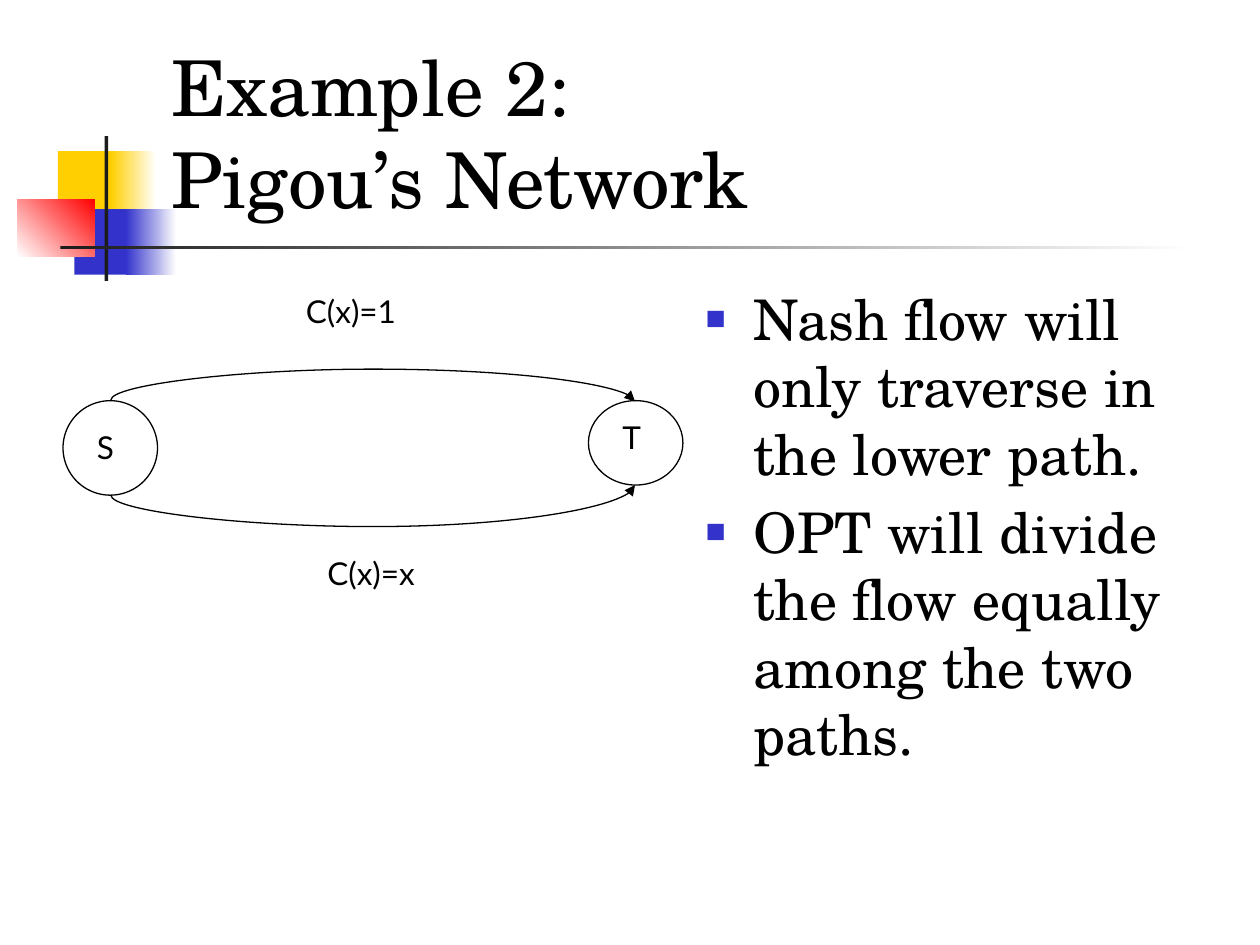
from lxml import etree
from pptx import Presentation
from pptx.dml.color import RGBColor
from pptx.enum.shapes import MSO_CONNECTOR, MSO_SHAPE
from pptx.enum.text import MSO_ANCHOR, MSO_AUTO_SIZE, PP_ALIGN
from pptx.oxml.ns import qn
from pptx.util import Inches, Pt

COLORS = {"black": "000000", "white": "FFFFFF", "yellow": "FFCF01",
          "blue": "3333CC", "red": "FF0000", "charcoal": "1C1C1C"}
SERIF, SANS = "TeX Gyre Schola", "Lato"


def color(name):
    return RGBColor.from_string(COLORS[name])


def place(shape, left, top, width, height):
    shape.left, shape.top = Inches(left), Inches(top)
    shape.width, shape.height = Inches(width), Inches(height)


def style(paragraph, font, size):
    paragraph.alignment = PP_ALIGN.LEFT
    paragraph.font.name = font
    paragraph.font.size = Pt(size)
    paragraph.font.color.rgb = color("black")


def add_block(slide, box, start, end=None, angle=0):
    """Borderless rectangle, solid or fading from start to end."""
    block = slide.shapes.add_shape(MSO_SHAPE.RECTANGLE, *map(Inches, box))
    block.shadow.inherit = False
    block.line.fill.background()
    if end is None:
        block.fill.solid()
        block.fill.fore_color.rgb = color(start)
        return
    block.fill.gradient()
    block.fill.gradient_angle = angle
    for stop, name in zip(block.fill.gradient_stops, (start, end)):
        stop.color.rgb = color(name)


def add_ornament(slide, left, top):
    """Coloured squares with a crossing bar and rule."""
    for dx, dy, width, height, *paint in (
            (0.32, 0.12, 0.48, 0.52, "yellow"),
            (0.74, 0.12, 0.36, 0.52, "yellow", "white"),
            (0.45, 0.58, 0.46, 0.52, "blue"),
            (0.86, 0.58, 0.4, 0.52, "blue", "white"),
            (0, 0.5, 0.61, 0.46, "white", "red", 45),
            (0.69, 0, 0.03, 1.15, "charcoal"),
            (0.34, 0.87, 9, 0.03, "charcoal", "white")):
        add_block(slide, (left + dx, top + dy, width, height), *paint)


def add_title(slide, box, text):
    title = slide.shapes.title
    place(title, *box)
    frame = title.text_frame
    frame.auto_size = MSO_AUTO_SIZE.NONE
    frame.vertical_anchor = MSO_ANCHOR.BOTTOM
    frame.text = text
    style(frame.paragraphs[0], SERIF, 44)
    # Bring the title in front of the ornament
    slide.shapes._spTree.append(title._element)


def add_bullets(slide, box, items):
    body = slide.placeholders[1]
    place(body, *box)
    frame = body.text_frame
    frame.auto_size = MSO_AUTO_SIZE.NONE
    frame.text = "\n".join(items)
    for paragraph in frame.paragraphs:
        style(paragraph, SERIF, 32)
        paragraph.space_before = Pt(6.4)
        properties = paragraph._p.get_or_add_pPr()
        properties.set("marL", str(Inches(0.38)))
        properties.set("indent", str(Inches(-0.38)))
        bullet_color = etree.SubElement(properties, qn("a:buClr"))
        etree.SubElement(bullet_color, qn("a:srgbClr"), val=COLORS["blue"])
        etree.SubElement(properties, qn("a:buSzPct"), val="60000")
        etree.SubElement(properties, qn("a:buChar"), char="■")
        # Bullet settings must precede the default run properties
        defaults = properties.find(qn("a:defRPr"))
        if defaults is not None:
            properties.append(defaults)


def add_label(slide, left, top, width, text):
    label = slide.shapes.add_textbox(*map(Inches, (left, top, width, 0.4)))
    label.text_frame.word_wrap = True
    label.text_frame.text = text
    style(label.text_frame.paragraphs[0], SANS, 18)


def add_node(slide, left, top, height, name, label_dy):
    node = slide.shapes.add_shape(
        MSO_SHAPE.OVAL, *map(Inches, (left, top, 0.75, height)))
    node.shadow.inherit = False
    node.fill.background()
    node.line.color.rgb = color("black")
    node.line.width = Pt(0.75)
    add_label(slide, left + 0.17, top + label_dy, 0.42, name)


def add_curve(slide, start, end, rise, side):
    """Arrow bulging by 0.25 inch: up for side 1, down for side -1.

    The connector is laid out upright, then turned a quarter clockwise.
    """
    center_x, center_y = (start[0] + end[0]) / 2, (start[1] + end[1]) / 2
    half_span, half_rise = (end[0] - start[0]) / 2, side * rise / 2
    curve = slide.shapes.add_connector(
        MSO_CONNECTOR.CURVE,
        Inches(center_x - half_rise), Inches(center_y + half_span),
        Inches(center_x + half_rise), Inches(center_y - half_span))
    curve.line.color.rgb = color("black")
    curve.line.width = Pt(0.75)
    properties = curve._element.spPr
    properties.find(qn("a:xfrm")).set("rot", str(90 * 60000))
    adjustments = properties.find(qn("a:prstGeom")).get_or_add_avLst()
    etree.SubElement(adjustments, qn("a:gd"), name="adj1",
                     fmla=f"val {round(-0.25 / rise * 100000)}")
    etree.SubElement(curve.line._get_or_add_ln(), qn("a:tailEnd"),
                     type="triangle")
    etree.SubElement(properties, qn("a:effectLst"))


def add_network(slide, left, top):
    """Nodes S and T joined by two parallel paths with their costs."""
    add_node(slide, left, top, 0.75, "S", 0.17)
    add_node(slide, left + 4.17, top, 0.67, "T", 0.09)
    source_x, target_x = left + 0.38, left + 4.54
    add_curve(slide, (source_x, top), (target_x, top), 0.01, 1)
    add_curve(slide, (source_x, top + 0.75), (target_x, top + 0.67), 0.08, -1)
    add_label(slide, left + 1.83, top - 0.91, 1.33, "C(x)=1")
    add_label(slide, left + 2, top + 1.17, 1.33, "C(x)=x")


def main():
    presentation = Presentation()
    presentation.slide_width, presentation.slide_height = Inches(10), Inches(7.5)
    slide = presentation.slides.add_slide(presentation.slide_layouts[1])
    add_ornament(slide, 0.14, 1.08)
    add_title(slide, (1.26, 0.23, 8.52, 1.6), "Example 2:\vPigou’s Network")
    add_bullets(slide, (5.5, 2.21, 4.33, 4.5),
                ("Nash flow will only traverse in the lower path.",
                 "OPT will divide the flow equally among the two paths."))
    add_network(slide, 0.5, 3.18)
    presentation.save("out.pptx")


if __name__ == "__main__":
    main()
